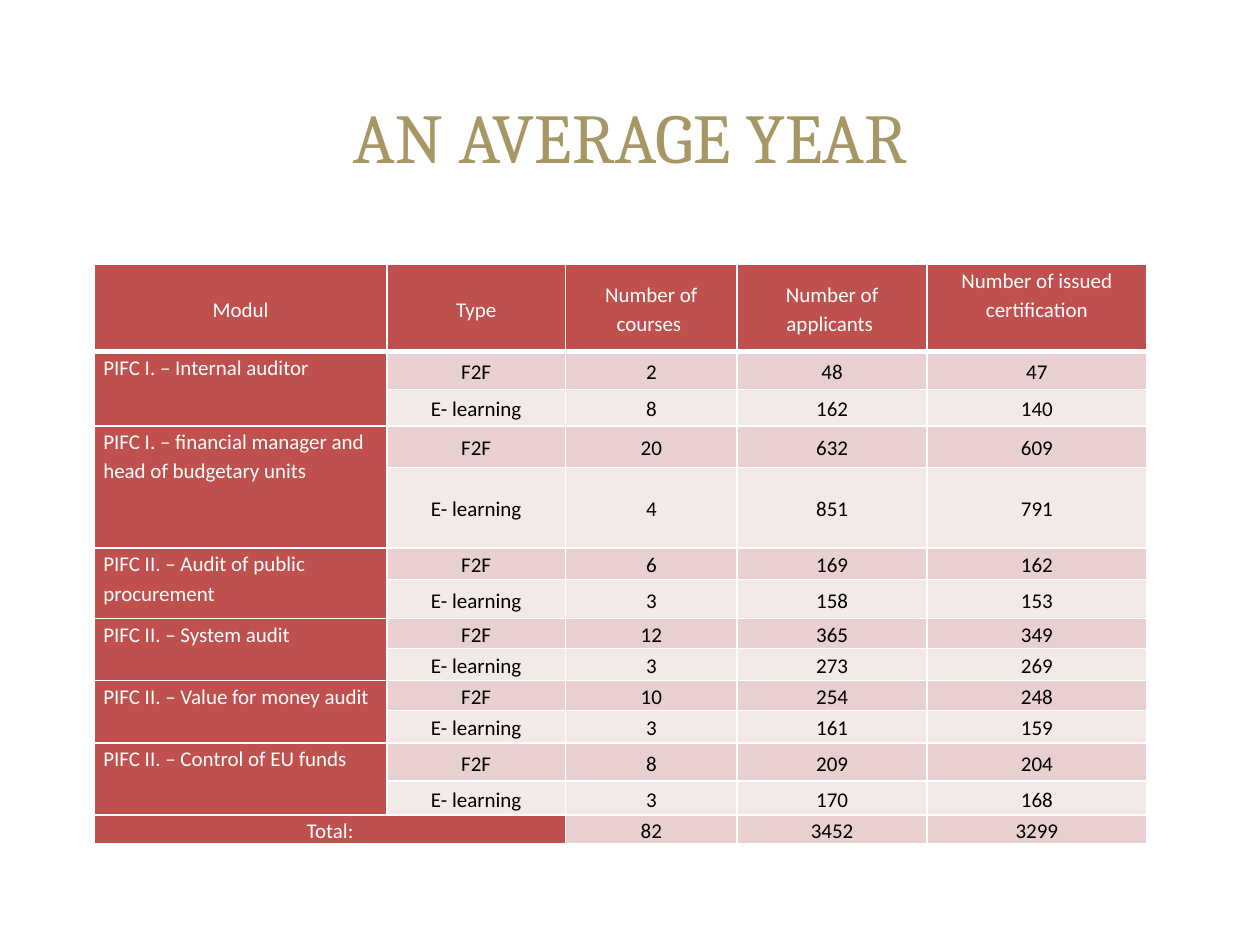
import lxml.etree
import pptx
import pptx.dml.color
import pptx.enum.text
import pptx.oxml.ns
import pptx.util

Inches = pptx.util.Inches
ALIGN = pptx.enum.text.PP_ALIGN
ANCHOR = pptx.enum.text.MSO_ANCHOR
COLORS = {
    "title": "A69765", "header": "C0504D", "face_to_face": "E8D0D0",
    "e_learning": "F4E9E9", "white": "FFFFFF", "black": "000000",
}
HEADINGS = ["Modul", "Type", "Number of courses ", "Number of applicants ",
            "Number of issued certification"]
MODULES = [
    ("PIFC I. – Internal auditor", (2, 48, 47), (8, 162, 140)),
    ("PIFC I. – financial manager and head of budgetary units",
     (20, 632, 609), (4, 851, 791)),
    ("PIFC II. – Audit of public procurement", (6, 169, 162), (3, 158, 153)),
    ("PIFC II. – System audit", (12, 365, 349), (3, 273, 269)),
    ("PIFC II. – Value for money audit", (10, 254, 248), (3, 161, 159)),
    ("PIFC II. – Control of EU funds", (8, 209, 204), (3, 170, 168)),
]
TOTALS = (82, 3452, 3299)
COLUMN_WIDTHS = [2.32, 1.42, 1.36, 1.51, 1.74]
ROW_HEIGHTS = [0.69, 0.3, 0.29, 0.33, 0.64, 0.25, 0.31,
               0.24, 0.25, 0.24, 0.26, 0.3, 0.27, 0.23]


def write(frame, text, font="Calibri", size=12, color="black",
          align=ALIGN.CENTER, spacing=1.15):
    paragraph = frame.paragraphs[0]
    paragraph.alignment = align
    paragraph.line_spacing = spacing
    run = paragraph.add_run()
    run.text = str(text)
    run.font.name = font
    run.font.size = pptx.util.Pt(size)
    run.font.color.rgb = pptx.dml.color.RGBColor.from_string(COLORS[color])


def style_cell(cell, fill, anchor=ANCHOR.MIDDLE, bottom=1):
    """Set margins, white borders and fill; bottom is a line width in points."""
    cell.margin_left = cell.margin_right = Inches(0.07)
    cell.margin_top = cell.margin_bottom = 0
    cell.vertical_anchor = anchor
    properties = cell._tc.get_or_add_tcPr()
    qn = pptx.oxml.ns.qn
    for side, width in (("L", 1), ("R", 1), ("T", 1), ("B", bottom)):
        line = lxml.etree.SubElement(properties, qn(f"a:ln{side}"),
                                     w=str(pptx.util.Pt(width)))
        solid = lxml.etree.SubElement(line, qn("a:solidFill"))
        lxml.etree.SubElement(solid, qn("a:srgbClr"), val=COLORS["white"])
    cell.fill.solid()
    cell.fill.fore_color.rgb = pptx.dml.color.RGBColor.from_string(COLORS[fill])


presentation = pptx.Presentation()
presentation.slide_width = Inches(10)
presentation.slide_height = Inches(7.5)
slide = presentation.slides.add_slide(presentation.slide_layouts[6])

title = slide.shapes.add_textbox(Inches(0.5), Inches(0.45), Inches(9), Inches(1.25))
title.text_frame.word_wrap = True
title.text_frame.vertical_anchor = ANCHOR.MIDDLE
write(title.text_frame, "AN AVERAGE YEAR", font="Cambria", size=40,
      color="title", spacing=1.0)

table = slide.shapes.add_table(
    len(ROW_HEIGHTS), len(COLUMN_WIDTHS), Inches(0.75), Inches(2.1),
    Inches(sum(COLUMN_WIDTHS)), Inches(sum(ROW_HEIGHTS))).table
table.horz_banding = False
table.first_row = False
for column, width in zip(table.columns, COLUMN_WIDTHS):
    column.width = Inches(width)
for row, height in zip(table.rows, ROW_HEIGHTS):
    row.height = Inches(height)

for column, heading in enumerate(HEADINGS):
    cell = table.cell(0, column)
    last = column == len(HEADINGS) - 1
    style_cell(cell, "header", ANCHOR.TOP if last else ANCHOR.MIDDLE, bottom=3)
    write(cell.text_frame, heading, color="white")

for index, (module, face_to_face, e_learning) in enumerate(MODULES):
    top = 1 + 2 * index
    kinds = [("F2F", "face_to_face", face_to_face),
             ("E- learning", "e_learning", e_learning)]
    for row, (kind, fill, numbers) in enumerate(kinds, top):
        style_cell(table.cell(row, 0), "header", ANCHOR.TOP)
        for column, value in enumerate((kind, *numbers), 1):
            style_cell(table.cell(row, column), fill)
            write(table.cell(row, column).text_frame, value)
    table.cell(top, 0).merge(table.cell(top + 1, 0))
    write(table.cell(top, 0).text_frame, module, color="white", align=ALIGN.LEFT)

total_row = len(ROW_HEIGHTS) - 1
for column in range(2):
    style_cell(table.cell(total_row, column), "header", ANCHOR.TOP)
table.cell(total_row, 0).merge(table.cell(total_row, 1))
write(table.cell(total_row, 0).text_frame, "Total:", color="white")
for column, value in enumerate(TOTALS, 2):
    style_cell(table.cell(total_row, column), "face_to_face", ANCHOR.TOP)
    write(table.cell(total_row, column).text_frame, value)

presentation.save("out.pptx")
